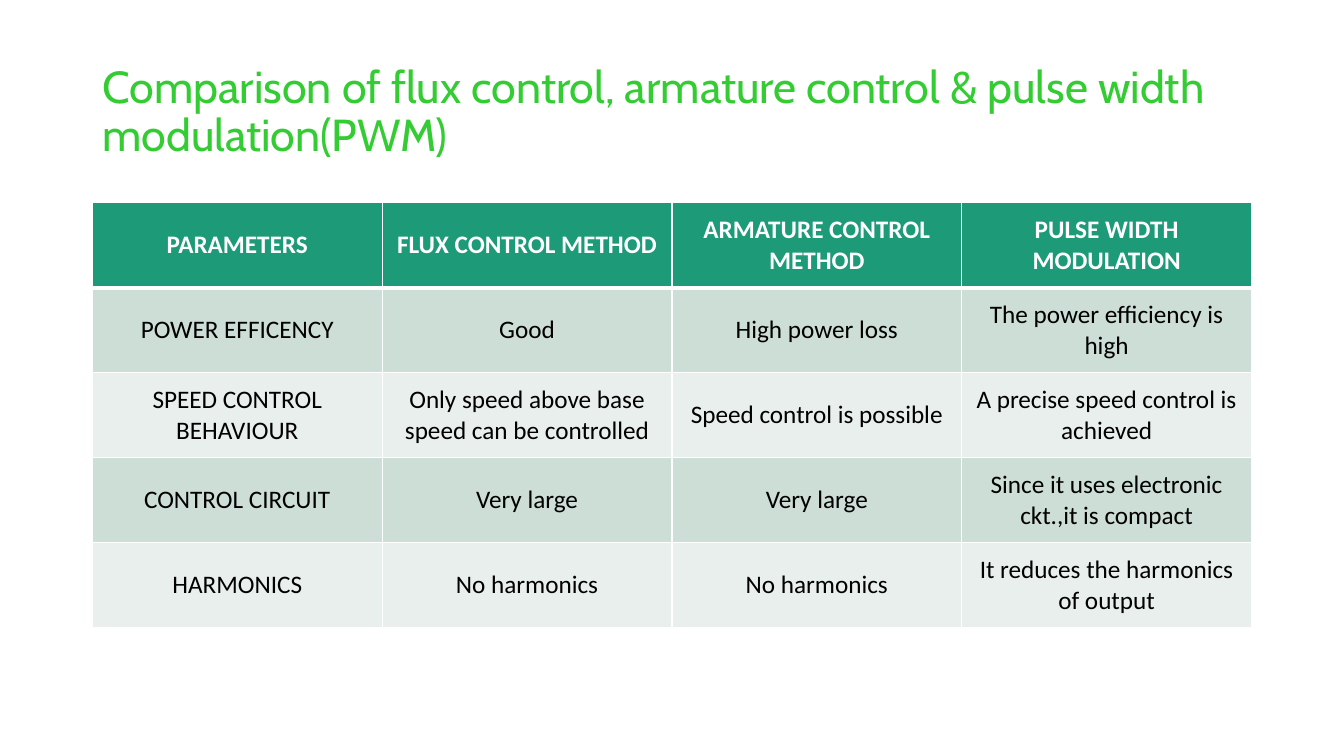
from dataclasses import dataclass

import lxml.etree
import pptx
import pptx.dml.color
import pptx.enum.text
import pptx.oxml.ns
import pptx.util

EMU_PER_PX = 9525  # 96 px to the inch


@dataclass(frozen=True)
class Theme:
    title_font: str = "Cabin"
    table_font: str = "Calibri"
    title_size: int = 32
    table_size: int = 18
    title_color: str = "33CC33"
    header_fill: str = "1D9A78"
    header_text: str = "FFFFFF"
    body_text: str = "000000"
    band_fills: tuple = ("CDDED6", "E8EFEC")
    border_color: str = "FFFFFF"
    border_width: int = 1
    header_rule_width: int = 3


THEME = Theme()

TITLE = "Comparison of flux control, armature control & pulse width modulation(PWM)"
COMPARISON = [
    ["PARAMETERS", "FLUX CONTROL METHOD", "ARMATURE CONTROL METHOD",
     "PULSE WIDTH MODULATION"],
    ["POWER EFFICENCY", "Good", "High power loss", "The power efficiency is high"],
    ["SPEED CONTROL BEHAVIOUR", "Only speed above base speed can be controlled",
     "Speed control is possible", "A precise speed control is achieved"],
    ["CONTROL CIRCUIT", "Very large", "Very large",
     "Since it uses electronic ckt.,it is compact"],
    ["HARMONICS", "No harmonics", "No harmonics",
     "It reduces the harmonics of output"],
]


def px(length):
    return pptx.util.Emu(length * EMU_PER_PX)


def rgb(color):
    return pptx.dml.color.RGBColor.from_string(color)


def format_runs(paragraph, font_name, size, color, bold=False):
    for run in paragraph.runs:
        run.font.name = font_name
        run.font.size = pptx.util.Pt(size)
        run.font.color.rgb = rgb(color)
        run.font.bold = bold


def add_title(slide, text, left, top, width, height):
    title = slide.shapes.title
    title.left, title.top = px(left), px(top)
    title.width, title.height = px(width), px(height)
    title.text_frame.text = text
    title.text_frame.word_wrap = True
    title.text_frame.vertical_anchor = pptx.enum.text.MSO_ANCHOR.MIDDLE
    paragraph = title.text_frame.paragraphs[0]
    paragraph.alignment = pptx.enum.text.PP_ALIGN.LEFT
    paragraph.line_spacing = 0.9
    format_runs(paragraph, THEME.title_font, THEME.title_size, THEME.title_color)


def set_borders(cell, top_width, bottom_width):
    """Draw the four cell borders; call before the cell is filled."""
    properties = cell._tc.get_or_add_tcPr()
    widths = {"a:lnL": THEME.border_width, "a:lnR": THEME.border_width,
              "a:lnT": top_width, "a:lnB": bottom_width}
    qn = pptx.oxml.ns.qn
    for tag, width in widths.items():
        line = lxml.etree.SubElement(properties, qn(tag), w=str(pptx.util.Pt(width)))
        fill = lxml.etree.SubElement(line, qn("a:solidFill"))
        lxml.etree.SubElement(fill, qn("a:srgbClr"), val=THEME.border_color)


def format_cell(cell, text, row_index):
    is_header = row_index == 0
    # The thick rule is shared by the header and the first body row
    set_borders(
        cell,
        THEME.header_rule_width if row_index == 1 else THEME.border_width,
        THEME.header_rule_width if is_header else THEME.border_width,
    )
    band_fill = THEME.band_fills[(row_index - 1) % len(THEME.band_fills)]
    cell.fill.solid()
    cell.fill.fore_color.rgb = rgb(THEME.header_fill if is_header else band_fill)
    cell.vertical_anchor = pptx.enum.text.MSO_ANCHOR.MIDDLE
    cell.text_frame.text = text
    paragraph = cell.text_frame.paragraphs[0]
    paragraph.alignment = pptx.enum.text.PP_ALIGN.CENTER
    text_color = THEME.header_text if is_header else THEME.body_text
    format_runs(paragraph, THEME.table_font, THEME.table_size, text_color, is_header)


def add_comparison_table(slide, rows, left, top, column_width, row_height):
    row_count, column_count = len(rows), len(rows[0])
    table = slide.shapes.add_table(
        row_count, column_count, px(left), px(top),
        px(column_width * column_count), px(row_height * row_count),
    ).table
    for row_index, row in enumerate(rows):
        for column_index, text in enumerate(row):
            format_cell(table.cell(row_index, column_index), text, row_index)


def main():
    presentation = pptx.Presentation()
    presentation.slide_width, presentation.slide_height = px(1280), px(720)
    title_only_layout = presentation.slide_layouts[5]
    slide = presentation.slides.add_slide(title_only_layout)

    # Heading
    add_title(slide, TITLE, left=88, top=38, width=1104, height=139)

    # Comparison of the three methods
    add_comparison_table(slide, COMPARISON, left=88, top=193,
                         column_width=276, row_height=81)

    presentation.save("out.pptx")


if __name__ == "__main__":
    main()
